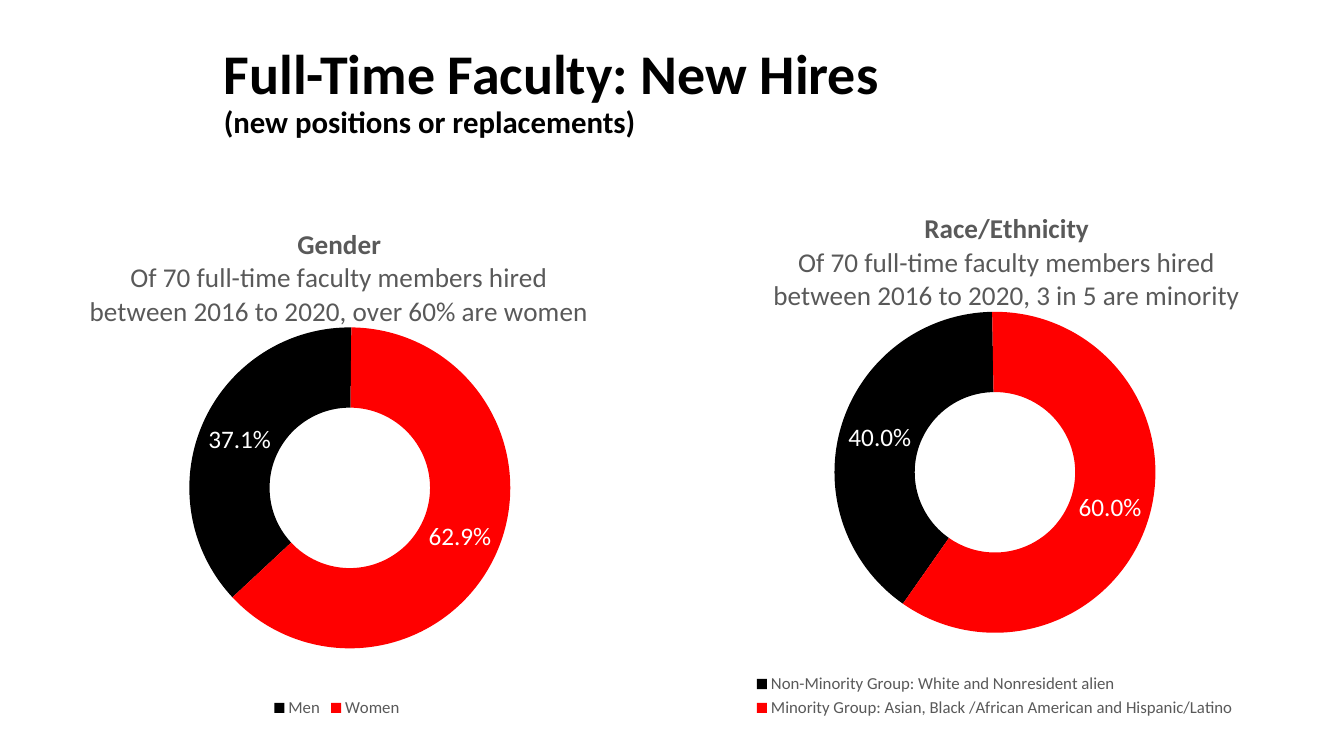
import pptx
import pptx.chart.data
import pptx.dml.color
import pptx.enum.chart
import pptx.enum.text
import pptx.util
from lxml import etree

CHART_NS = "http://schemas.openxmlformats.org/drawingml/2006/chart"
BLACK, RED, GRAY, WHITE = "000000", "FF0000", "595959", "FFFFFF"


def color(hex_string):
    """Turn a hex string into a colour."""
    return pptx.dml.color.RGBColor.from_string(hex_string)


def px(length):
    """Turn px into EMU."""
    return pptx.util.Emu(round(length * 914400 / 100.8))


class HiringSlide:
    """Hold the style and the current slide."""

    font_name = "Calibri"
    slice_colors = (BLACK, RED)

    def __init__(self, presentation):
        """Add a blank slide."""
        self.slide = presentation.slides.add_slide(presentation.slide_layouts[6])

    def style(self, font, size=None, fill=BLACK, bold=False):
        """Style one font."""
        font.name = self.font_name
        font.bold = bold
        font.color.rgb = color(fill)
        if size:
            font.size = pptx.util.Pt(size)

    def heading(self, box, lines):
        """Add the heading from (text, size) lines."""
        frame = self.slide.shapes.add_textbox(*map(px, box)).text_frame
        frame.word_wrap = True
        frame.vertical_anchor = pptx.enum.text.MSO_ANCHOR.MIDDLE
        paragraph = frame.paragraphs[0]
        paragraph.line_spacing = 0.9
        self.style(paragraph.font, bold=True)
        for index, (text, size) in enumerate(lines):
            if index:
                paragraph.add_line_break()
            run = paragraph.add_run()
            run.text = text
            run.font.size = pptx.util.Pt(size)

    def place(self, parent, after, **settings):
        """Give a chart part a manual layout."""
        for old in parent.findall(f"{{{CHART_NS}}}layout"):
            parent.remove(old)
        layout = etree.Element(f"{{{CHART_NS}}}layout")
        manual = etree.SubElement(layout, f"{{{CHART_NS}}}manualLayout")
        for tag, value in settings.items():
            etree.SubElement(manual, f"{{{CHART_NS}}}{tag}", val=str(value))
        if after is None:
            parent.insert(0, layout)
        else:
            after.addnext(layout)

    def doughnut(self, box, title, message, shares, start, title_at, plot_at):
        """Add a doughnut chart with its title, labels and legend."""
        data = pptx.chart.data.CategoryChartData(number_format="0.0%")
        data.categories = list(shares)
        data.add_series("Series 1", list(shares.values()))
        chart = self.slide.shapes.add_chart(
            pptx.enum.chart.XL_CHART_TYPE.DOUGHNUT, *map(px, box), data).chart
        self.style(chart.font, 10)

        frame = chart.chart_title.text_frame
        frame.text = f"{title}\n{message}"
        for paragraph, bold in zip(frame.paragraphs, (True, False)):
            self.style(paragraph.font, 19.4, GRAY, bold)

        chart.has_legend = True
        chart.legend.position = pptx.enum.chart.XL_LEGEND_POSITION.BOTTOM
        chart.legend.include_in_layout = False
        self.style(chart.legend.font, 12, GRAY)

        plot = chart.plots[0]
        plot.vary_by_categories = True
        plot.has_data_labels = True
        labels = plot.data_labels
        labels.show_value = True
        labels.show_percentage = False
        labels.number_format = "0.0%"
        labels.number_format_is_linked = False
        self.style(labels.font, 18, WHITE)
        for index, slice_color in enumerate(self.slice_colors):
            fill = plot.series[0].points[index].format.fill
            fill.solid()
            fill.fore_color.rgb = color(slice_color)

        root = chart.element
        names = {"c": CHART_NS}
        root.find(".//c:firstSliceAng", names).set("val", str(start))
        root.find(".//c:holeSize", names).set("val", "30")
        title_part = root.find("c:chart/c:title", names)
        x, y = title_at
        self.place(title_part, title_part.find("c:tx", names),
                   xMode="edge", yMode="edge", x=x, y=y)
        x, y, w, h = plot_at
        self.place(root.find(".//c:plotArea", names), None, layoutTarget="inner",
                   xMode="edge", yMode="edge", x=x, y=y, w=w, h=h)


def main():
    """Build and save the slide."""
    presentation = pptx.Presentation()
    presentation.slide_width, presentation.slide_height = px(1344), px(756)
    hires = HiringSlide(presentation)
    hires.heading((214, 40, 1038, 107), [
        ("Full-Time Faculty: New Hires", 40),
        ("(new positions or replacements)", 22)])
    message = "Of 70 full-time faculty members hired between 2016 to 2020, "
    hires.doughnut(
        (16, 202, 642, 520), "Gender", message + "over 60% are women",
        {"Men": 0.371, "Women": 0.629},
        227, (0.11, 0.04), (0.27, 0.24, 0.5, 0.62))
    hires.doughnut(
        (674, 202, 642, 520), "Race/Ethnicity", message + "3 in 5 are minority",
        {"Non-Minority Group: White and Nonresident alien": 0.4,
         "Minority Group: Asian, Black /African American and Hispanic/Latino": 0.6},
        215, (0.15, 0.01), (0.25, 0.21, 0.5, 0.62))
    presentation.save("out.pptx")


if __name__ == "__main__":
    main()
